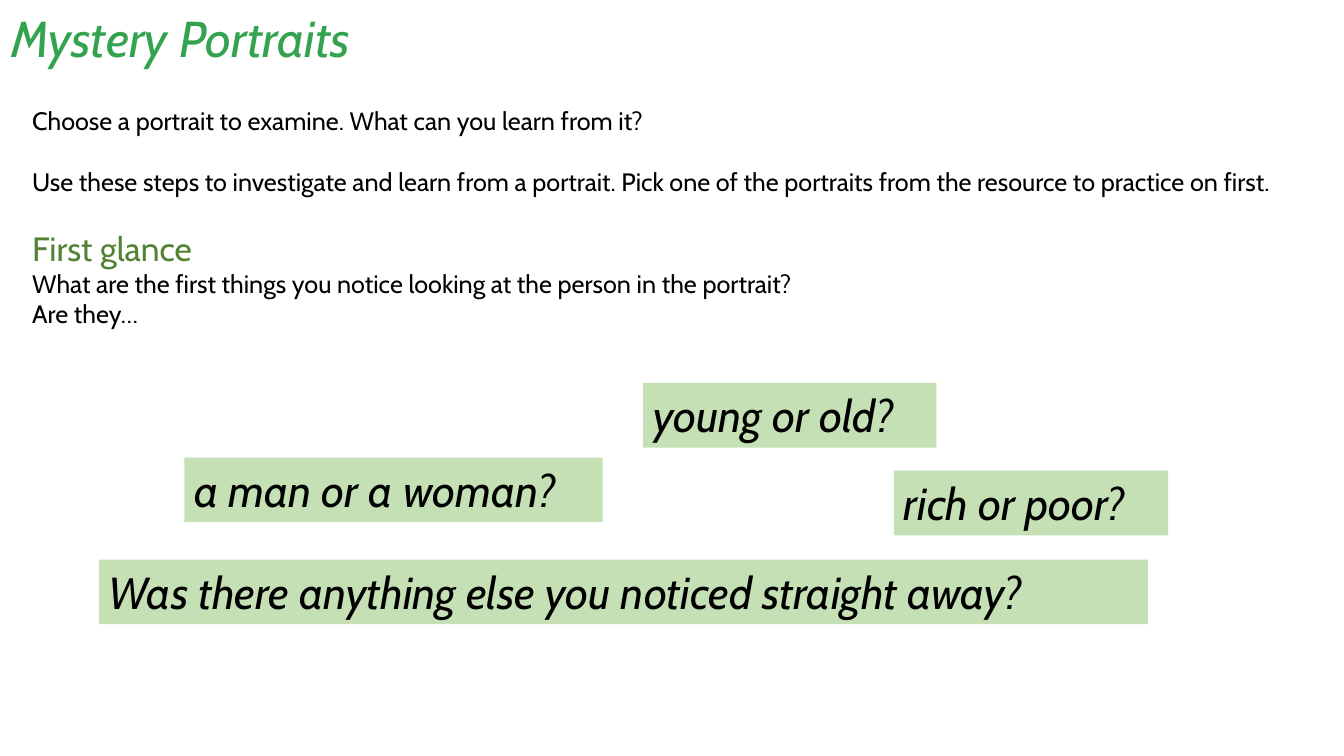
from pptx import Presentation
from pptx.dml.color import RGBColor
from pptx.enum.shapes import MSO_SHAPE
from pptx.enum.text import MSO_ANCHOR, PP_ALIGN
from pptx.util import Cm, Pt

COLORS = {"title": "33A34F", "heading": "548235", "text": "000000", "label": "C5E0B4"}
FORMATS = {
    "title": {"name": "Cabin", "size": Pt(36), "italic": True},
    "heading": {"name": "Cabin", "size": Pt(24)},
    "text": {"name": "Cabin", "size": Pt(18)},
    "label": {"name": "Cabin", "size": Pt(32), "italic": True},
}
GAP = Pt(22)  # one line of body text

# Style, space before, text
BODY = [
    ("text", None, "Choose a portrait to examine. What can you learn from it?"),
    ("text", GAP, "Use these steps to investigate and learn from a portrait. "
                  "Pick one of the portraits from the resource to practice on first."),
    ("heading", GAP, "First glance"),
    ("text", None, "What are the first things you notice looking at the person in the portrait?"),
    ("text", None, "Are they…"),
]

# Left, top and width in the question area, text
LABEL_HEIGHT = 1.63
QUESTIONS = [
    (2.16, 1.88, 10.54, "a man or a woman?"),
    (13.72, 0, 7.39, "young or old?"),
    (20.04, 2.21, 6.91, "rich or poor?"),
    (0, 4.45, 26.44, "Was there anything else you noticed straight away?"),
]


def set_text(p, text, style, color):
    p.alignment = PP_ALIGN.LEFT
    r = p.add_run()
    r.text = text
    for key, value in FORMATS[style].items():
        setattr(r.font, key, value)
    r.font.color.rgb = RGBColor.from_string(COLORS[color])


def add_text_box(s, left, top, width, height):
    tf = s.shapes.add_textbox(Cm(left), Cm(top), Cm(width), Cm(height)).text_frame
    tf.word_wrap = True
    tf.vertical_anchor = MSO_ANCHOR.TOP
    return tf


def add_title(s, left, top, width, height):
    p = add_text_box(s, left, top, width, height).paragraphs[0]
    p.line_spacing = 0.9
    set_text(p, "Mystery Portraits", "title", "title")


def add_body(s, left, top, width, height):
    tf = add_text_box(s, left, top, width, height)
    for i, (style, gap, text) in enumerate(BODY):
        p = tf.add_paragraph() if i else tf.paragraphs[0]
        p.space_before = gap
        set_text(p, text, style, style)


def add_questions(s, left, top):
    for dx, dy, width, text in QUESTIONS:
        sp = s.shapes.add_shape(MSO_SHAPE.RECTANGLE, Cm(left + dx), Cm(top + dy),
                                Cm(width), Cm(LABEL_HEIGHT))
        sp.shadow.inherit = False
        sp.fill.solid()
        sp.fill.fore_color.rgb = RGBColor.from_string(COLORS["label"])
        sp.line.fill.background()
        tf = sp.text_frame
        tf.word_wrap = True
        tf.vertical_anchor = MSO_ANCHOR.TOP
        set_text(tf.paragraphs[0], text, "label", "text")


def main():
    prs = Presentation()
    prs.slide_width, prs.slide_height = Cm(33.87), Cm(19.05)
    s = prs.slides.add_slide(prs.slide_layouts[6])
    add_title(s, 0.03, 0.23, 30.76, 4.6)
    add_body(s, 0.56, 2.54, 32.77, 10.85)
    add_questions(s, 2.49, 9.65)
    prs.save("out.pptx")


if __name__ == "__main__":
    main()
